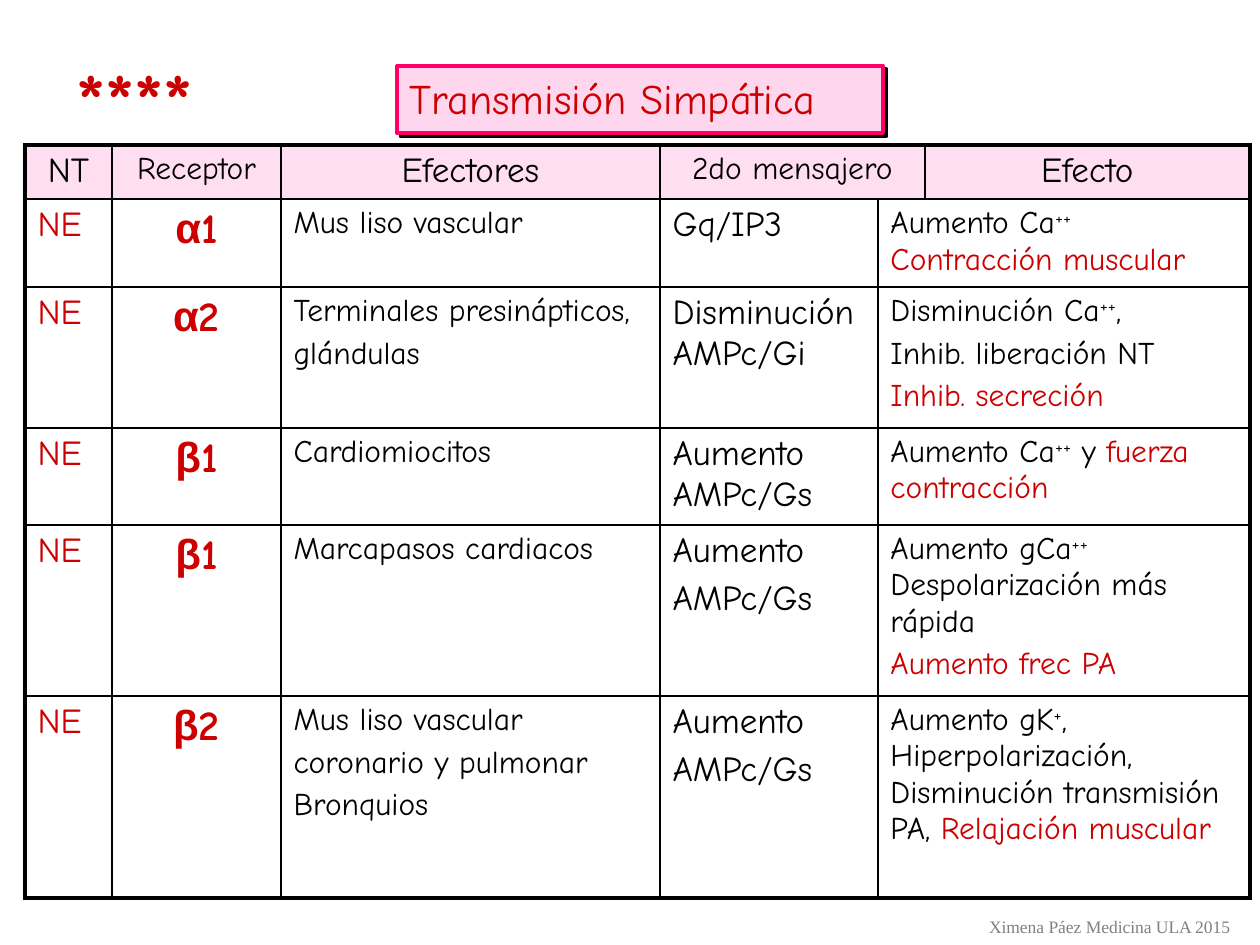
"""Build the slide on sympathetic transmission: receptors, effectors and effects."""
from lxml.etree import SubElement
from pptx import Presentation
from pptx.dml.color import RGBColor
from pptx.enum.text import MSO_ANCHOR, MSO_AUTO_SIZE, PP_ALIGN
from pptx.oxml import parse_xml
from pptx.oxml.ns import nsdecls, qn
from pptx.util import Emu, Pt

PX = 914400 / 126
RED, BLACK, HEADER_PINK = "CC0000", "000000", "FEDEF0"
SHADOW = (
    f'<a:effectLst {nsdecls("a")}><a:outerShdw dist="35921" dir="2700000" algn="ctr" rotWithShape="0">'
    f'<a:srgbClr val="{BLACK}"/></a:outerShdw></a:effectLst>'
)


def rgb(value):
    return RGBColor.from_string(value)


def write(frame, paragraphs, size, colour=BLACK, font="Comic Neue", align=PP_ALIGN.LEFT, bold=False, before=0):
    for number, runs in enumerate(paragraphs):
        paragraph = frame.add_paragraph() if number else frame.paragraphs[0]
        paragraph.alignment = align
        paragraph.space_before = Pt(before)
        paragraph.font.size = Pt(size)
        paragraph.font.name = font
        paragraph.font.bold = bold
        paragraph.font.color.rgb = rgb(colour)
        for text, style in runs:
            run = paragraph.add_run()
            run.text = text
            run.font.size = Pt(size)
            run.font.name = "Arial" if style == "greek" else font
            run.font.bold = bold
            run.font.color.rgb = rgb(RED if style == "red" else colour)
            if style == "super":
                run.font._element.set("baseline", "30000")


presentation = Presentation()
presentation.slide_width, presentation.slide_height = Emu(9144000), Emu(6858000)
slide = presentation.slides.add_slide(presentation.slide_layouts[5])

columns = [87, 169, 379, 218, 47, 325]
rows = [54, 88, 141, 97, 171, 202]
headings = [(0, "NT", 20), (1, "Receptor", 18), (2, "Efectores", 20), (3, "2do mensajero", 18), (5, "Efecto", 20)]
receptors = [
    ("α", "1", ["Mus liso vascular"], ["Gq/IP3"],
     [[("Aumento Ca", ""), ("++ ", "super"), ("Contracción muscular", "red")]]),
    ("α", "2", ["Terminales presinápticos,", "glándulas"], ["Disminución\vAMPc/Gi"],
     [[("Disminución Ca", ""), ("++", "super"), (",", "")],
      [("Inhib. liberación NT", "")], [("Inhib. secreción", "red")]]),
    ("β", "1", ["Cardiomiocitos"], ["Aumento AMPc/Gs"],
     [[("Aumento Ca", ""), ("++", "super"), (" y ", ""), ("fuerza contracción", "red")]]),
    ("β", "1", ["Marcapasos cardiacos"], ["Aumento", "AMPc/Gs"],
     [[("Aumento gCa", ""), ("++", "super"), (" Despolarización más rápida", "")],
      [("Aumento frec PA", "red")]]),
    ("β", "2", ["Mus liso vascular", "coronario y pulmonar", "Bronquios"], ["Aumento", "AMPc/Gs"],
     [[("Aumento gK", ""), ("+", "super"),
       (", Hiperpolarización, Disminución transmisión PA, ", ""), ("Relajación muscular", "red")]]),
]

frame = slide.shapes.add_table(
    len(rows), len(columns), Emu(int(25 * PX)), Emu(int(145 * PX)),
    Emu(int(sum(columns) * PX)), Emu(int(sum(rows) * PX)))
table = frame.table
table.first_row = table.horz_banding = False
for column, width in zip(table.columns, columns):
    column.width = Emu(int(width * PX))
for row, height in zip(table.rows, rows):
    row.height = Emu(int(height * PX))

table.cell(0, 3).merge(table.cell(0, 4))
for column, heading, size in headings:
    write(table.cell(0, column).text_frame, [[(heading, "")]], size, align=PP_ALIGN.CENTER, before=size / 5)

for row, (letter, subtype, effectors, messenger, effect) in enumerate(receptors, 1):
    table.cell(row, 4).merge(table.cell(row, 5))
    nt, receptor, effector, second, outcome = [table.cell(row, column).text_frame for column in range(5)]
    write(nt, [[("NE", "")]], 20, RED, before=4)
    write(receptor, [[(letter, "greek"), (subtype, "")]], 24, RED, align=PP_ALIGN.CENTER, bold=True, before=4.8)
    write(effector, [[(line, "")] for line in effectors], 18, before=3.6)
    for number, line in enumerate(messenger):
        paragraph = second.add_paragraph() if number else second.paragraphs[0]
        paragraph.text = line
        paragraph.space_before = Pt(4)
        paragraph.font.size = Pt(20)
        paragraph.font.name = "Comic Neue"
        paragraph.font.color.rgb = rgb(BLACK)
        for run in paragraph.runs:
            run.font.size = Pt(20)
            run.font.name = "Comic Neue"
            run.font.color.rgb = rgb(BLACK)
    write(outcome, effect, 18, before=3.6)

for row in range(len(rows)):
    for column in range(len(columns)):
        cell = table.cell(row, column)
        if row == 0:
            cell.fill.solid()
            cell.fill.fore_color.rgb = rgb(HEADER_PINK)
        else:
            cell.fill.background()
        properties = cell._tc.get_or_add_tcPr()
        outer_edges = {
            "a:lnL": column == 0,
            "a:lnR": column + cell.span_width == len(columns),
            "a:lnT": row == 0,
            "a:lnB": row == len(rows) - 1,
        }
        for position, (side, outer) in enumerate(outer_edges.items()):
            border = SubElement(properties, qn(side), w=str(Pt(2.25 if outer else 1)))
            SubElement(SubElement(border, qn("a:solidFill")), qn("a:srgbClr"), val=BLACK)
            properties.insert(position, border)

title = slide.shapes.title
title.left, title.top, title.width, title.height = [Emu(int(side * PX)) for side in (397, 66, 486, 67)]
title.fill.solid()
title.fill.fore_color.rgb = rgb("FED6ED")
title.line.color.rgb = rgb("FF0066")
title.line.width = Pt(2.25)
title._element.spPr.append(parse_xml(SHADOW))
title.text_frame.auto_size = MSO_AUTO_SIZE.NONE
title.text_frame.vertical_anchor = MSO_ANCHOR.TOP
write(title.text_frame, [[("Transmisión Simpática", "")]], 24, RED)

captions = [
    ((64, 45, 190, 106), "****", 44, RED, "Comic Neue", PP_ALIGN.LEFT, True),
    ((974, 910, 271, 34), "Ximena Páez Medicina ULA 2015", 10, "808080", "Times New Roman", PP_ALIGN.CENTER, False),
]
for box, text, size, colour, font, align, starred in captions:
    caption = slide.shapes.add_textbox(*[Emu(int(side * PX)) for side in box])
    caption.text_frame.word_wrap = False
    write(caption.text_frame, [[(text, "")]], size, colour, font, align, starred)
    if starred:
        run_properties = caption.text_frame.paragraphs[0].runs[0].font._element
        run_properties.find(qn("a:solidFill")).addnext(parse_xml(SHADOW))

presentation.save("out.pptx")
